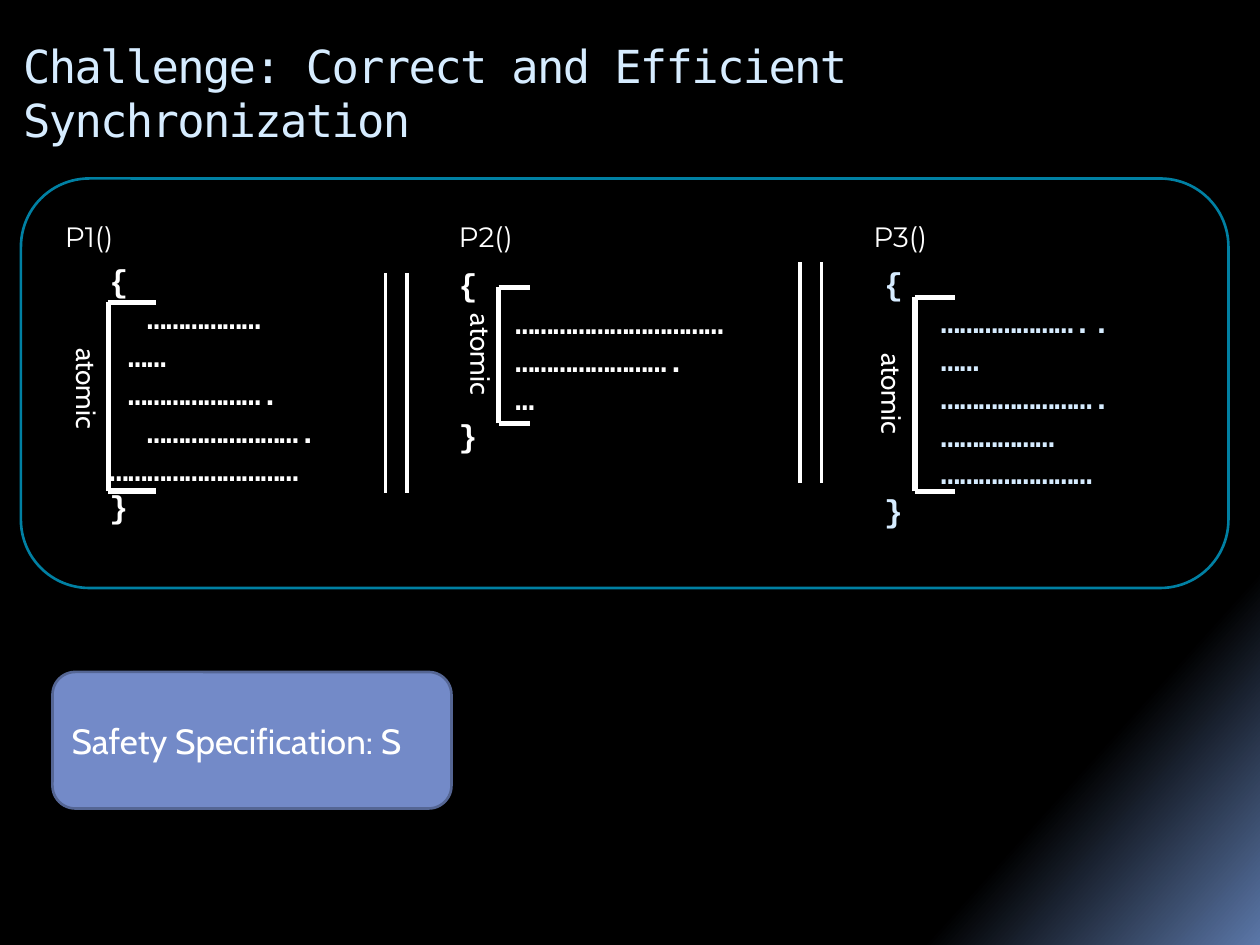
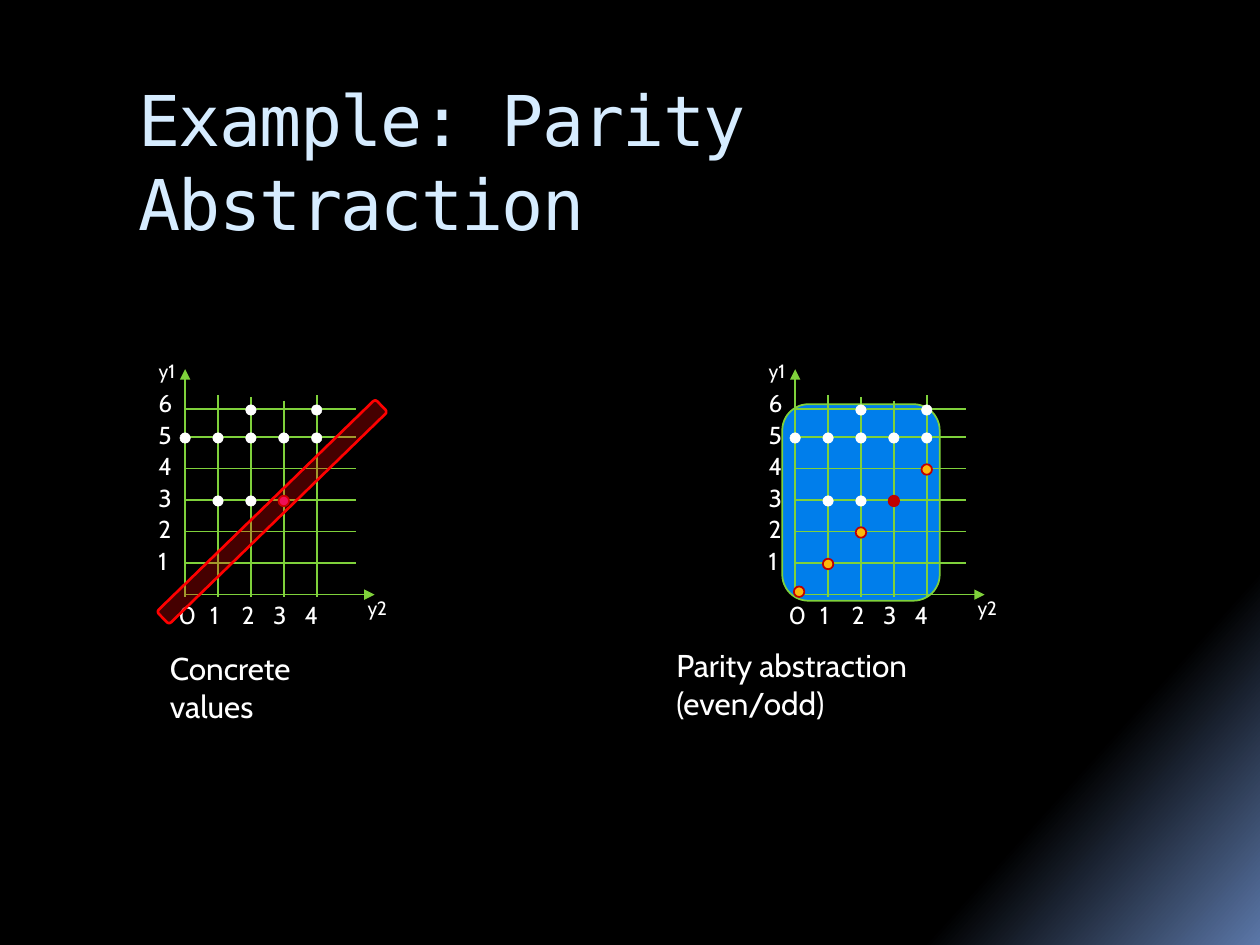
from copy import deepcopy
from dataclasses import dataclass
from itertools import product

from lxml.etree import SubElement
from pptx import Presentation
from pptx.dml.color import RGBColor
from pptx.enum.shapes import MSO_CONNECTOR, MSO_SHAPE
from pptx.enum.text import MSO_ANCHOR, MSO_AUTO_SIZE, PP_ALIGN
from pptx.oxml.ns import qn
from pptx.util import Pt

COLORS = {
    "white": "FFFFFF", "black": "000000", "glow": "5B77A8", "pale": "D6ECFF",
    "panel": "0080A3", "spec": "738AC8", "spec_edge": "556694",
    "grid": "7FD13B", "abstract": "007EEB", "red": "FF0000",
    "dark_red": "C00000", "pink": "EA157A", "amber": "FEB80A",
}
TITLE_FONT = {"name": "DejaVu Sans Mono"}
CODE_FONT = {"name": "Courier New", "size": Pt(18), "bold": True}
LABEL_FONT = {"name": "Montserrat", "size": Pt(16)}
BODY_FONT = {"name": "Cabin"}
CODE_CHAR = 10.8  # width of one character of code

Box = tuple[float, float, float, float]  # left, top, width, height
Point = tuple[float, float]


@dataclass
class Bracket:
    x: float
    top: float
    bottom: float
    arm: float
    label_at: Point


@dataclass
class Procedure:
    name: str
    name_box: Box
    code_box: Box
    color: str
    lines: list[tuple[int, str]]  # indent in characters, text
    bracket: Bracket


@dataclass
class Dot:
    column: float
    row: float
    fill: str = "white"
    edge: str = "white"
    weight: float = 0.25


@dataclass
class Plot:
    x0: float
    dots: list[Dot]
    caption: str
    caption_box: Box


PROCEDURES = [
    Procedure("P1()", (30, 114, 162, 42), (55.4, 145.4, 167, 160), "white",
              [(0, "{"), (2, "………………"), (1, "……"), (1, "…………………."),
               (2, "……………………."), (0, "…………………………"), (0, "}")],
              Bracket(61.9, 172.8, 280.6, 27.4, (18.7, 209.5))),
    Procedure("P2()", (255, 114, 120, 42), (255, 148, 180, 115), "white",
              [(0, "{"), (3, "……………………………"), (3, "……………………."),
               (3, "…"), (0, "}")],
              Bracket(285, 164.2, 242, 18, (244, 190))),
    Procedure("P3()", (492, 114, 162, 42), (498.2, 147.6, 174, 158), "pale",
              [(0, "{"), (3, "………………….."), (3, "……"), (3, "……………………."),
               (3, "………………"), (3, "……………………"), (0, "}")],
              Bracket(522.8, 170, 280.8, 23, (478.8, 212.4))),
]

WHITE_DOTS = [Dot(c, 5) for c in range(5)] + [
    Dot(2, 6), Dot(4, 6), Dot(1, 3), Dot(2, 3)]
EVEN_DOTS = [Dot(n, n, "amber", "dark_red", 1) for n in (0.12, 1, 2, 4)]
CONCRETE = Plot(105.8, WHITE_DOTS + [Dot(3, 3, "pink", "dark_red", 1)],
                "Concrete\vvalues", (90, 367.2, 134, 50))
PARITY = Plot(454.4, WHITE_DOTS + [Dot(3, 3, "dark_red", "dark_red", 1)] + EVEN_DOTS,
              "Parity abstraction\v(even/odd)", (379.4, 365.8, 232, 50))


# Shared helpers
def rgb(name: str) -> RGBColor:
    return RGBColor.from_string(COLORS[name])


def apply(obj, values: dict) -> None:
    for key, value in values.items():
        setattr(obj, key, value)


def write(p, text: str, font: dict, color: str) -> None:
    p.text = text
    p.alignment = PP_ALIGN.LEFT
    for r in p.runs:
        apply(r.font, font)
        r.font.color.rgb = rgb(color)


def add_text(slide, box: Box, text: str, font: dict, color: str = "white", **frame):
    sp = slide.shapes.add_textbox(*map(Pt, box))
    apply(sp.text_frame, {"word_wrap": True} | frame)
    write(sp.text_frame.paragraphs[0], text, font, color)
    return sp


def add_tag(slide, box: Box, text: str, size: float):
    return add_text(slide, box, text, BODY_FONT | {"size": Pt(size)},
                    word_wrap=False, auto_size=MSO_AUTO_SIZE.SHAPE_TO_FIT_TEXT)


def add_block(slide, kind, box: Box, edge: str, weight: float, fill: str = ""):
    sp = slide.shapes.add_shape(kind, *map(Pt, box))
    sp.shadow.inherit = False
    if fill:
        sp.fill.solid()
        sp.fill.fore_color.rgb = rgb(fill)
    else:
        sp.fill.background()
    sp.line.color.rgb = rgb(edge)
    sp.line.width = Pt(weight)
    return sp


def add_line(slide, start: Point, end: Point, color: str, weight: float,
             arrow: bool = False) -> None:
    """Draw a straight line; an arrowhead sits at its start."""
    cx = slide.shapes.add_connector(MSO_CONNECTOR.STRAIGHT, *map(Pt, start + end))
    cx.line.color.rgb = rgb(color)
    cx.line.width = Pt(weight)
    sp_pr = cx._element.spPr
    if arrow:
        SubElement(sp_pr.find(qn("a:ln")), qn("a:headEnd"), type="triangle")
    SubElement(sp_pr, qn("a:effectLst"))


def set_background(master) -> None:
    fill = master.background.fill
    fill.gradient()
    fill.gradient_angle = 318
    stops = next(master.element.iter(qn("a:gsLst")))
    stops.append(deepcopy(stops[-1]))
    for stop, (position, color) in zip(
            fill.gradient_stops, [(0.65, "black"), (0.84, "black"), (1, "glow")]):
        stop.position = position
        stop.color.rgb = rgb(color)


def add_slide(prs, title: str, box: Box, size: float):
    slide = prs.slides.add_slide(prs.slide_layouts[5])
    sp = slide.shapes.title
    apply(sp, dict(zip(("left", "top", "width", "height"), map(Pt, box))))
    apply(sp.text_frame, {"word_wrap": True, "auto_size": MSO_AUTO_SIZE.NONE,
                          "vertical_anchor": MSO_ANCHOR.TOP})
    p = sp.text_frame.paragraphs[0]
    write(p, title, TITLE_FONT | {"size": Pt(size)}, "pale")
    for r in p.runs:
        r._r.get_or_add_rPr().set("spc", "-100")
    return slide


# Synchronization slide
def add_bracket(slide, b: Bracket) -> None:
    add_line(slide, (b.x, b.bottom), (b.x, b.top), "white", 3)
    for y in (b.top, b.bottom):
        add_line(slide, (b.x, y), (b.x + b.arm, y), "white", 3)
    add_tag(slide, (*b.label_at, 62, 26.6), "atomic", 16).rotation = 90


def add_procedure(slide, proc: Procedure) -> None:
    tf = add_text(slide, proc.code_box, "", CODE_FONT).text_frame
    for i, (indent, text) in enumerate(proc.lines):
        p = tf.add_paragraph() if i else tf.paragraphs[0]
        write(p, text, CODE_FONT, proc.color)
        p._p.get_or_add_pPr().set("marL", str(Pt(indent * CODE_CHAR)))
    add_text(slide, proc.name_box, proc.name, LABEL_FONT,
             vertical_anchor=MSO_ANCHOR.MIDDLE)
    add_bracket(slide, proc.bracket)


def build_synchronization(prs) -> None:
    slide = add_slide(prs, "Challenge: Correct and Efficient Synchronization",
                      (6, 18, 706, 90), 26)
    add_block(slide, MSO_SHAPE.ROUNDED_RECTANGLE, (12, 102, 690, 234), "panel", 1.5)
    for proc in PROCEDURES:
        add_procedure(slide, proc)

    # Parallel bars between the procedures
    for (x, top), gap in product([(220.4, 156), (457.2, 150)], (0, 12.2)):
        add_line(slide, (x + gap, top), (x + gap, top + 126), "white", 2)

    sp = add_block(slide, MSO_SHAPE.ROUNDED_RECTANGLE, (30, 384, 228, 78),
                   "spec_edge", 1.5, "spec")
    sp.text_frame.vertical_anchor = MSO_ANCHOR.MIDDLE
    write(sp.text_frame.paragraphs[0], "Safety Specification: S",
          BODY_FONT | {"size": Pt(20)}, "white")


# Parity slide
def row_y(row: float) -> float:
    """Rows are 18 apart; the top one sits slightly lower."""
    return 339.8 - 18 * row + (2 if row == 6 else 0)


def column_x(plot: Plot, column: float) -> float:
    return plot.x0 + 18.8 * column


def add_plot(slide, plot: Plot) -> None:
    x0, y0, foot = plot.x0, row_y(0), 341.3

    # Axes and grid
    add_line(slide, (x0, 211), (x0, foot), "grid", 0.94, arrow=True)
    add_line(slide, (x0 + 108.3, y0), (x0, y0), "grid", 0.94, arrow=True)
    for column, top in enumerate((226, 226.8, 229, 226), start=1):
        x = column_x(plot, column)
        add_line(slide, (x, top), (x, foot), "grid", 0.94)
    for row in range(1, 7):
        add_line(slide, (x0 + 97.4, row_y(row)), (x0, row_y(row)), "grid", 0.94)

    # Scale labels
    for column in range(5):
        add_tag(slide, (x0 - 10.8 + 18 * column, 339.1, 17.3, 20.2), str(column), 14)
    for row in range(1, 7):
        add_tag(slide, (x0 - 22.3, 326.2 - 18 * row, 17.3, 20.2), str(row), 14)
    add_tag(slide, (x0 + 97.2, 337, 25.2, 20.9), "y2", 11)
    add_tag(slide, (x0 - 22.3, 201.6, 25.2, 20.9), "y1", 11)

    for d in plot.dots:
        add_block(slide, MSO_SHAPE.OVAL,
                  (column_x(plot, d.column) - 3, row_y(d.row) - 2.5, 6, 6),
                  d.edge, d.weight, d.fill)
    add_text(slide, plot.caption_box, plot.caption, BODY_FONT | {"size": Pt(18)})


def build_parity(prs) -> None:
    slide = add_slide(prs, "Example: Parity Abstraction", (72, 40.3, 612, 72), 40)

    # Concrete values with the diagonal bar on top
    add_plot(slide, CONCRETE)
    bar = add_block(slide, MSO_SHAPE.ROUNDED_RECTANGLE, (68.4, 287.4, 174.2, 10.1),
                    "red", 1.5, "red")
    bar.rotation = 315.8
    fill_color = next(bar._element.spPr.iter(qn("a:srgbClr")))
    SubElement(fill_color, qn("a:alpha"), val="27000")

    # Abstract values over the covered area
    add_block(slide, MSO_SHAPE.ROUNDED_RECTANGLE, (447, 231, 90, 112.3),
              "grid", 1, "abstract")
    add_plot(slide, PARITY)


def main() -> None:
    prs = Presentation()
    apply(prs, {"slide_width": Pt(720), "slide_height": Pt(540)})
    set_background(prs.slide_master)
    build_synchronization(prs)
    build_parity(prs)
    prs.save("out.pptx")


if __name__ == "__main__":
    main()
